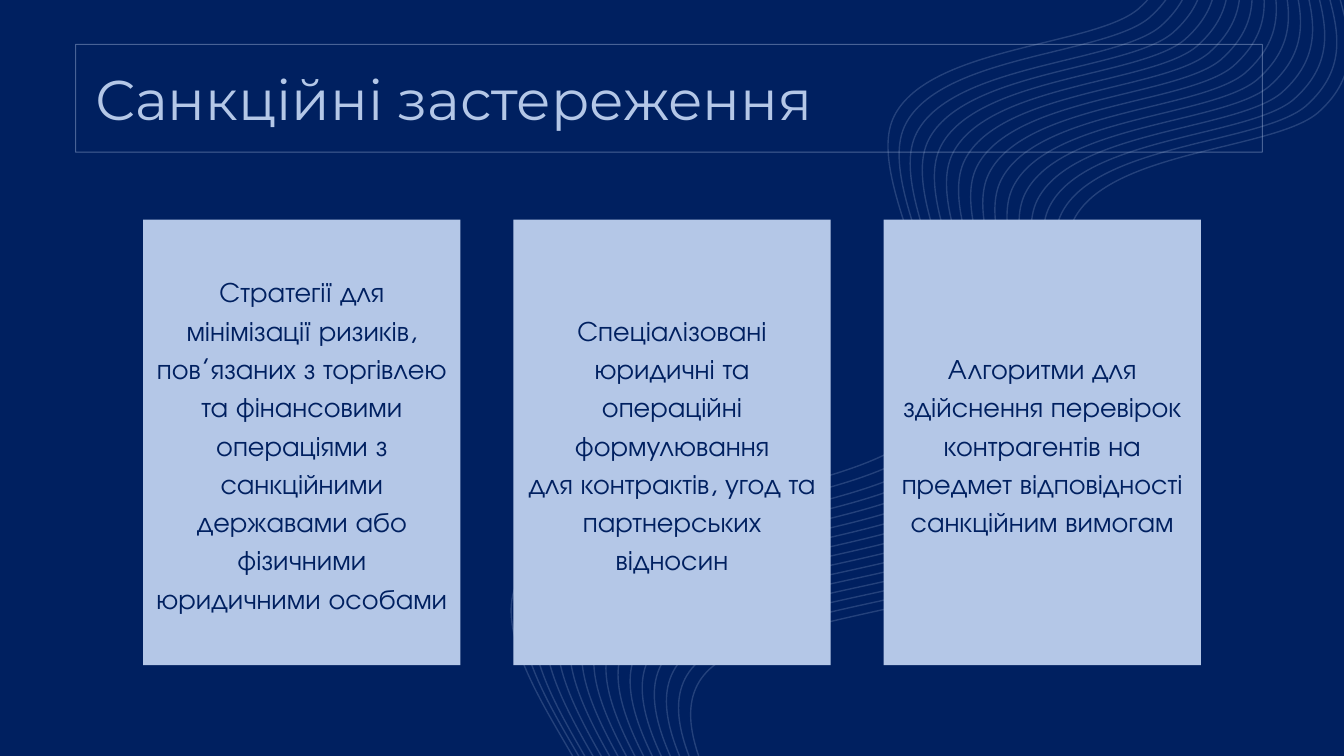
from lxml import etree
from pptx import Presentation
from pptx.dml.color import RGBColor
from pptx.enum.shapes import MSO_SHAPE
from pptx.enum.text import MSO_ANCHOR, PP_ALIGN
from pptx.oxml.ns import qn
from pptx.util import Inches, Pt

RECTANGLE = MSO_SHAPE.RECTANGLE
MIDDLE = MSO_ANCHOR.MIDDLE
CENTER, LEFT = PP_ALIGN.CENTER, PP_ALIGN.LEFT

WIDTH, HEIGHT = 13.33, 7.5
NAVY, PALE_BLUE = "002060", "B4C7E7"
TITLE_FONT, CARD_FONT = "Montserrat", "TeX Gyre Adventor"

TITLE = "Санкційні застереження"
CARDS = [
    ["Стратегії для мінімізації ризиків, пов’язаних з торгівлею та "
     "фінансовими операціями з санкційними державами або фізичними",
     "юридичними особами"],
    ["Спеціалізовані юридичні та операційні формулювання",
     "для контрактів, угод та партнерських відносин"],
    ["Алгоритми для здійснення перевірок контрагентів на предмет "
     "відповідності санкційним вимогам"],
]

# Rightmost wave: start point, then two control points and an end per bend
WAVE = [
    (13.28, -0.05),
    (13.39, 0.35), (13.5, 0.74), (13.07, 1.12),
    (12.63, 1.49), (11, 1.49), (10.65, 2.18),
    (10.3, 2.87), (11.57, 4.5), (10.96, 5.25),
    (10.35, 6), (7.51, 6.04), (6.98, 6.7),
    (6.44, 7.36), (7.76, 8.71), (7.75, 9.22),
    (7.73, 9.73), (7.31, 9.74), (6.89, 9.76),
]
WAVE_COUNT = 16


def color(hex_code):
    return RGBColor.from_string(hex_code)


def style_line(shape, width, opacity):
    """Outline without fill, in translucent pale blue."""
    shape.shadow.inherit = False
    shape.fill.background()
    shape.line.width = Pt(width)
    shape.line.color.rgb = color(PALE_BLUE)
    tint = shape.line.fill._xPr.find(qn("a:solidFill"))[0]
    etree.SubElement(tint, qn("a:alpha")).set("val", str(opacity * 1000))


def add_panel(page, box, fill=None):
    panel = page.shapes.add_shape(RECTANGLE, *map(Inches, box))
    panel.shadow.inherit = False
    if fill:
        panel.fill.solid()
        panel.fill.fore_color.rgb = color(fill)
        panel.line.fill.background()
    return panel


def write(shape, paragraphs, font, size, hex_code, align, spacing):
    frame = shape.text_frame
    frame.word_wrap = True
    frame.vertical_anchor = MIDDLE
    frame.text = "\n".join(paragraphs)
    for para in frame.paragraphs:
        para.alignment = align
        para.line_spacing = spacing
        for span in para.runs:
            span.font.name = font
            span.font.size = Pt(size)
            span.font.color.rgb = color(hex_code)


def bend(shape):
    """Turn each three straight segments into one Bézier curve."""
    segments = list(shape._element.iter(qn("a:lnTo")))
    outline = segments[0].getparent()
    for start in range(0, len(segments), 3):
        curve = etree.SubElement(outline, qn("a:cubicBezTo"))
        for segment in segments[start:start + 3]:
            curve.append(segment[0])
            outline.remove(segment)


def add_waves(page):
    for index in range(WAVE_COUNT):
        # The last two waves sit slightly steeper than the rest
        extra = max(0, index - 13)
        shift_x = -0.12 * index + 0.01 * extra
        shift_y = -0.066 * index - 0.02 * extra
        points = [(Inches(x + shift_x), Inches(y + shift_y)) for x, y in WAVE]
        builder = page.shapes.build_freeform(*points[0])
        builder.add_line_segments(points[1:], close=False)
        wave = builder.convert_to_shape()
        bend(wave)
        style_line(wave, 1, 20)


def add_cards(page, box):
    left, top, width, height = box
    card_width = 0.3 * width
    pitch = (width - card_width) / (len(CARDS) - 1)
    for index, paragraphs in enumerate(CARDS):
        card = add_panel(
            page, (left + index * pitch, top, card_width, height), PALE_BLUE)
        write(card, paragraphs, CARD_FONT, 20, NAVY, CENTER, 1.14)


def add_title(page, box):
    title = add_panel(page, box)
    style_line(title, 0.75, 40)
    frame = title.text_frame
    frame.margin_left = frame.margin_right = Inches(0.2)
    frame.margin_top = frame.margin_bottom = Inches(0.2)
    write(title, [TITLE], TITLE_FONT, 40, PALE_BLUE, LEFT, 1.0)


def main():
    deck = Presentation()
    deck.slide_width, deck.slide_height = Inches(WIDTH), Inches(HEIGHT)
    page = deck.slides.add_slide(deck.slide_layouts[6])

    # Backdrop
    add_panel(page, (0, 0, WIDTH, HEIGHT), NAVY)
    add_waves(page)

    # Content
    add_cards(page, (1.42, 2.18, 10.49, 4.42))
    add_title(page, (0.75, 0.44, 11.77, 1.07))
    deck.save("out.pptx")


if __name__ == "__main__":
    main()
